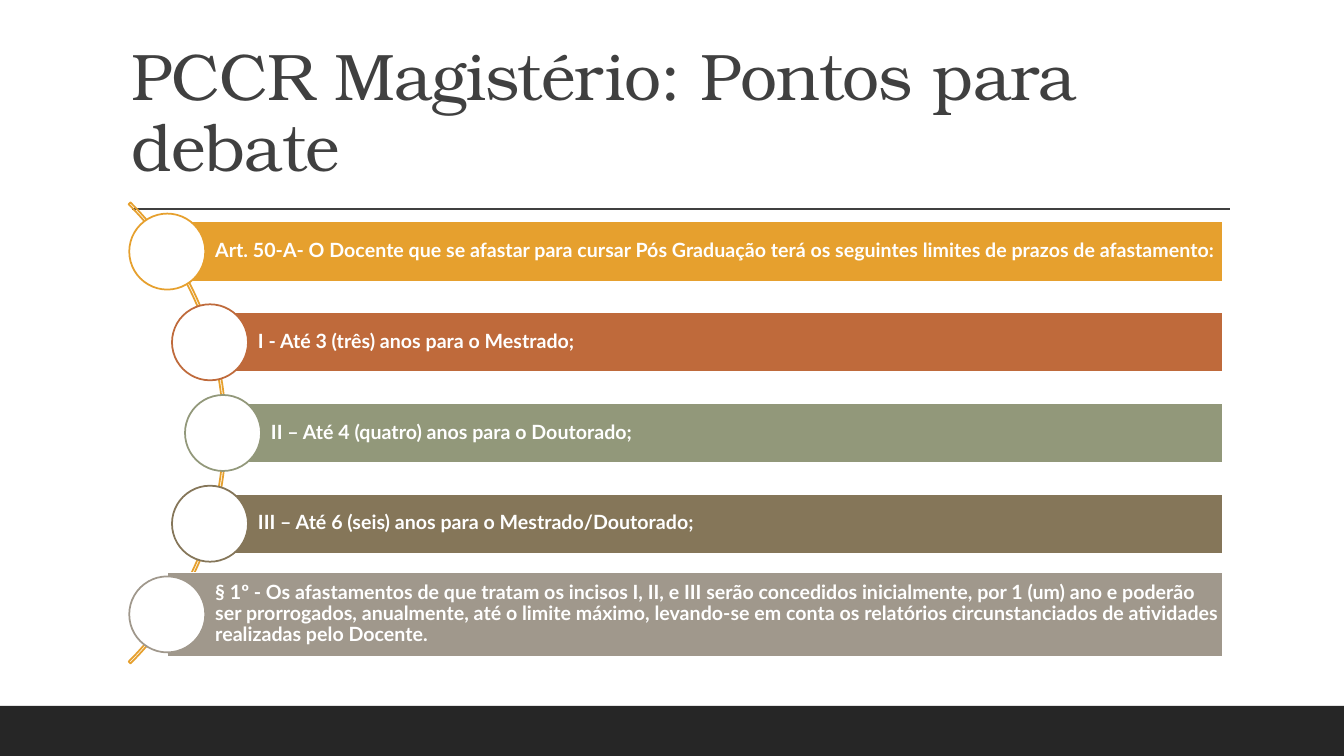
import math

import pptx
import pptx.dml.color
import pptx.enum.shapes
import pptx.enum.text
import pptx.util

RGBColor = pptx.dml.color.RGBColor
MSO_SHAPE = pptx.enum.shapes.MSO_SHAPE
PX = 914400 / 100.8

WHITE = RGBColor(0xFF, 0xFF, 0xFF)
INK = RGBColor(0x40, 0x40, 0x40)
BAND = RGBColor(0x26, 0x26, 0x26)
AMBER = RGBColor(0xE6, 0xA0, 0x2E)
RUST = RGBColor(0xBF, 0x6A, 0x3B)
SAGE = RGBColor(0x92, 0x98, 0x7A)
OLIVE = RGBColor(0x85, 0x76, 0x59)
STONE = RGBColor(0xA0, 0x98, 0x8C)

# text, colour, bar height
ARTICLES = [
    ("Art. 50-A- O Docente que se afastar para cursar Pós Graduação terá "
     "os seguintes limites de prazos de afastamento:", AMBER, 60),
    ("I - Até 3 (três) anos para o Mestrado;", RUST, 60),
    ("II – Até 4 (quatro) anos para o Doutorado;", SAGE, 60),
    ("III – Até 6 (seis) anos para o Mestrado/Doutorado;", OLIVE, 60),
    ("§ 1º - Os afastamentos de que tratam os incisos I, II, e III serão "
     "concedidos inicialmente, por 1 (um) ano e poderão ser prorrogados, "
     "anualmente, até o limite máximo, levando-se em conta os relatórios "
     "circunstanciados de atividades realizadas pelo Docente.", STONE, 84),
]


def px(n):
    return pptx.util.Emu(round(n * PX))


def add_shape(s, kind, x, y, w, h, fill=None, line=None):
    """Add a preset shape without shadow; None leaves fill or line out."""
    sp = s.shapes.add_shape(kind, px(x), px(y), px(w), px(h))
    sp.shadow.inherit = False
    if fill is None:
        sp.fill.background()
    else:
        sp.fill.solid()
        sp.fill.fore_color.rgb = fill
    if line is None:
        sp.line.fill.background()
    else:
        sp.line.color.rgb = line
        sp.line.width = pptx.util.Pt(1.25)
    return sp


def format_text(tf, font, size, color, bold=False):
    p = tf.paragraphs[0]
    p.alignment = pptx.enum.text.PP_ALIGN.LEFT
    p.line_spacing = 0.9
    r = p.runs[0]
    r.font.name = font
    r.font.size = pptx.util.Pt(size)
    r.font.bold = bold
    r.font.color.rgb = color
    return r


def add_title(s, x, y, w, h):
    sp = s.shapes.title
    sp.left, sp.top, sp.width, sp.height = px(x), px(y), px(w), px(h)
    tf = sp.text_frame
    tf.text = "PCCR Magistério: Pontos para debate"
    tf.word_wrap = True
    tf.auto_size = pptx.enum.text.MSO_AUTO_SIZE.NONE
    tf.vertical_anchor = pptx.enum.text.MSO_ANCHOR.BOTTOM
    r = format_text(tf, "TeX Gyre Bonum", 47, INK)
    r.font._element.set("spc", "-50")

    rule_y = y + h + 18
    rule = s.shapes.add_connector(
        pptx.enum.shapes.MSO_CONNECTOR.STRAIGHT,
        px(x + 11), px(rule_y), px(x + w), px(rule_y))
    rule.line.color.rgb = INK
    rule.line.width = pptx.util.Pt(1)
    rule._element.spPr.append(
        pptx.oxml.parse_xml('<a:effectLst xmlns:a="http://schemas.'
                            'openxmlformats.org/drawingml/2006/main"/>'))


def add_article(s, x, y, right, text, color, height):
    """Add a bar running from x to right, with a circle centred on (x, y)."""
    bar = add_shape(s, MSO_SHAPE.RECTANGLE, x, y - height / 2,
                    right - x, height, color, WHITE)
    tf = bar.text_frame
    tf.text = text
    tf.word_wrap = True
    tf.vertical_anchor = pptx.enum.text.MSO_ANCHOR.MIDDLE
    tf.margin_left = px(48)
    tf.margin_right = px(3)
    tf.margin_top = tf.margin_bottom = px(4)
    format_text(tf, "Lato", 14, WHITE, bold=True)
    d = 76
    add_shape(s, MSO_SHAPE.OVAL, x - d / 2, y - d / 2, d, d, WHITE, color)


def add_article_list(s, x, y, right, pitch):
    """Hang the articles on an arc whose centre is (x, y)."""
    radius = 326
    arc = add_shape(s, MSO_SHAPE.BLOCK_ARC, x - radius, y - radius,
                    2 * radius, 2 * radius, line=AMBER)
    for i, value in enumerate((189, 27, 0.004)):
        arc.adjustments[i] = value
    track = radius - 3
    for i, article in enumerate(ARTICLES):
        dy = (i - len(ARTICLES) // 2) * pitch
        add_article(s, x + math.sqrt(track ** 2 - dy ** 2), y + dy,
                    right, *article)


def main():
    prs = pptx.Presentation()
    prs.slide_width, prs.slide_height = px(1344), px(756)
    s = prs.slides.add_slide(prs.slide_layouts[5])
    add_shape(s, MSO_SHAPE.RECTANGLE, 0, 706, 1344, 50, BAND)
    add_title(s, 121, 31, 1109, 160)
    add_article_list(s, -100, 433, 1223, 90.7)
    prs.save("out.pptx")


if __name__ == "__main__":
    main()
